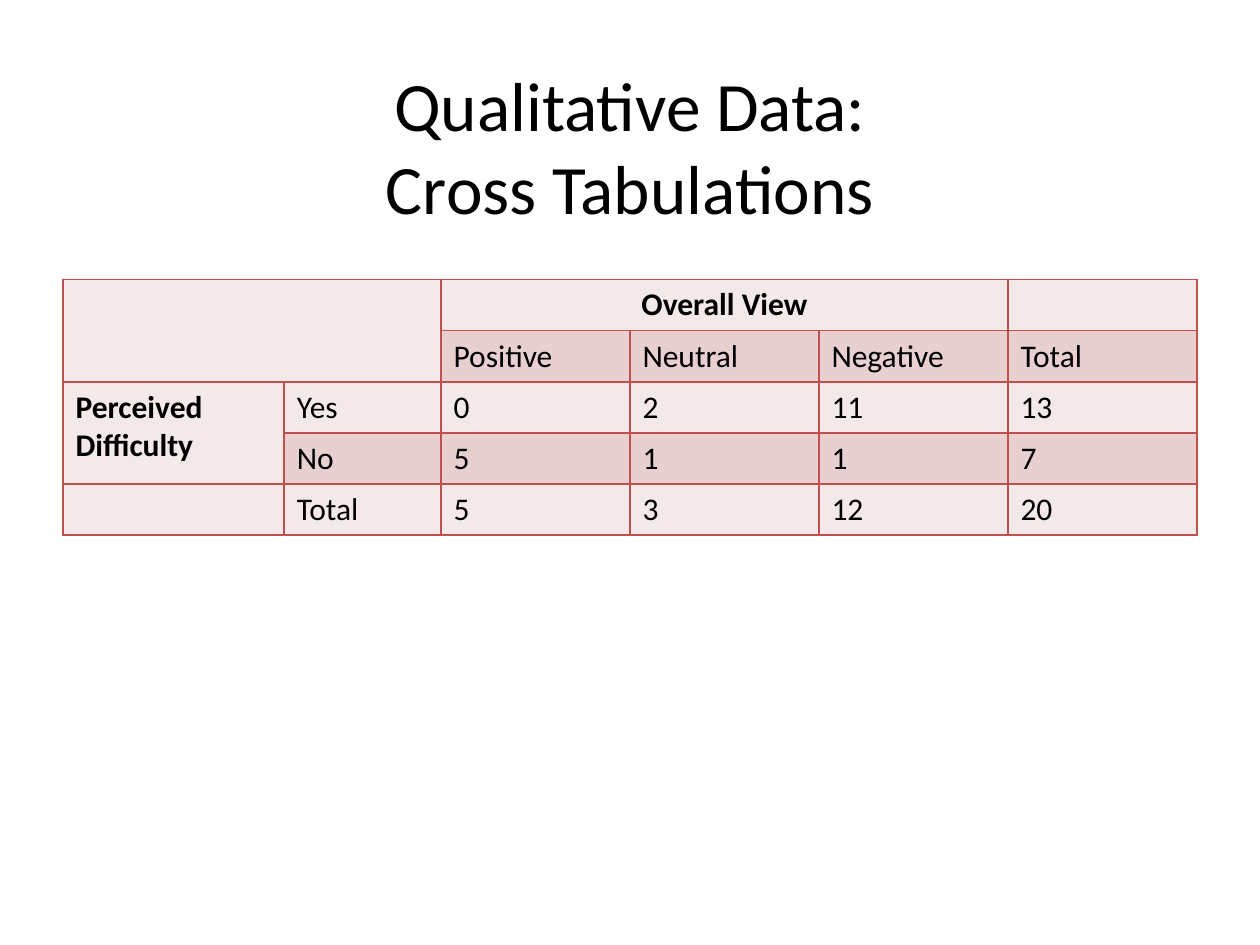
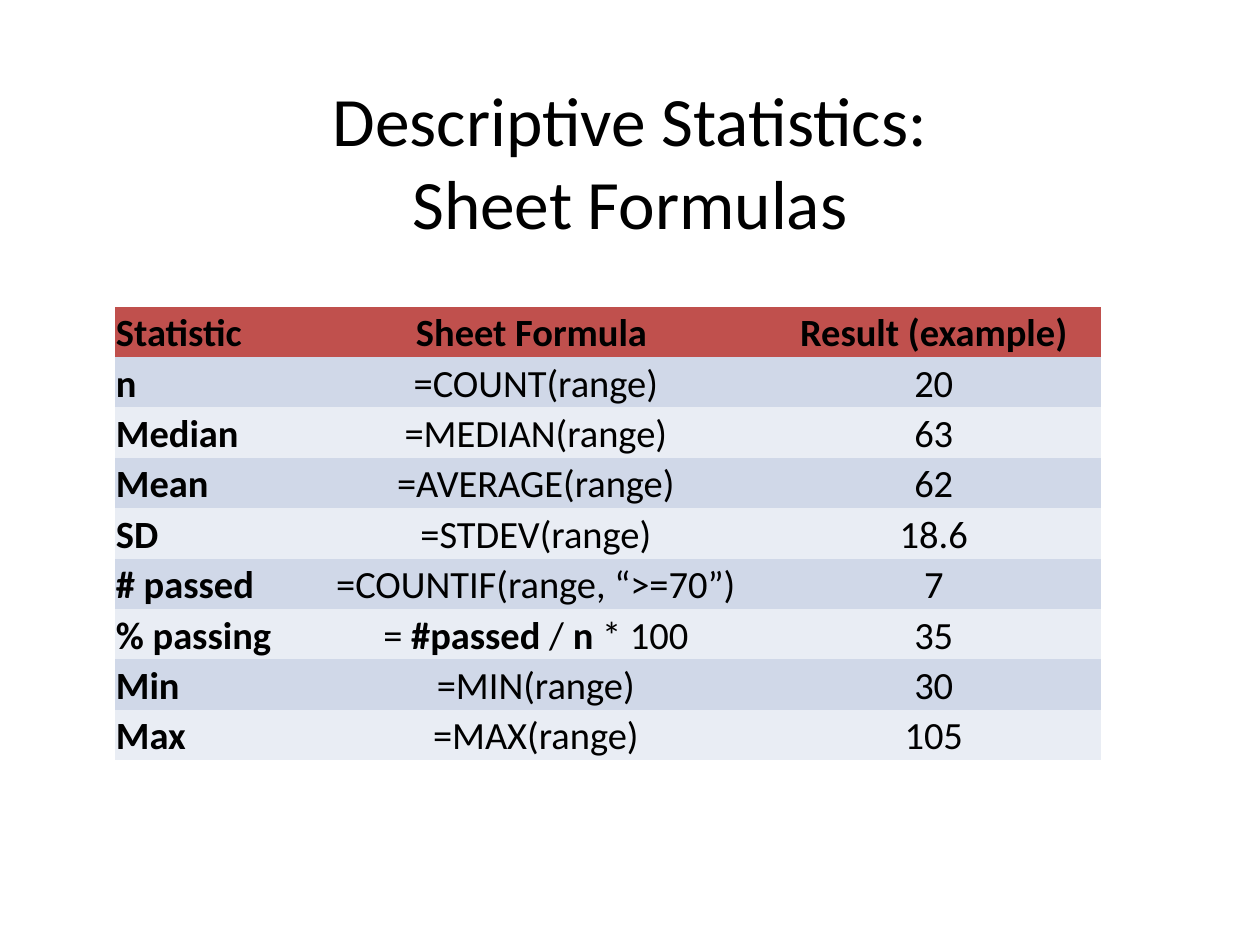
import pptx
import pptx.util
import pptx.dml.color
import pptx.enum.text
import pptx.oxml.ns
from lxml import etree

Pt = pptx.util.Pt
RGB = pptx.dml.color.RGBColor
ALIGN = pptx.enum.text.PP_ALIGN
ANCHOR = pptx.enum.text.MSO_ANCHOR
qn = pptx.oxml.ns.qn

FONT = "Calibri"
BLACK = RGB(0x00, 0x00, 0x00)
RED = RGB(0xC0, 0x50, 0x4D)
PALE_ROSE = RGB(0xF4, 0xE9, 0xE9)
ROSE = RGB(0xE8, 0xD0, 0xD0)
BLUE = RGB(0xD0, 0xD8, 0xE8)
PALE_BLUE = RGB(0xE9, 0xED, 0xF4)
NO_STYLE = "{2D5ABB26-0587-4C30-8999-92F81FD0307C}"

CROSS_TITLE = ("Qualitative Data:", "Cross Tabulations")
CROSS_ROWS = [
    ["", "", "Overall View", "", "", ""],
    ["", "", "Positive", "Neutral", "Negative", "Total"],
    ["Perceived Difficulty", "Yes", "0", "2", "11", "13"],
    ["", "No", "5", "1", "1", "7"],
    ["", "Total", "5", "3", "12", "20"],
]
CROSS_MERGES = [((0, 0), (1, 1)), ((0, 2), (0, 4)), ((2, 0), (3, 0))]
CROSS_HEADINGS = [(0, 2), (2, 0)]
CROSS_WIDTHS = [126.4, 89.6] + [108] * 4

FORMULA_TITLE = ("Descriptive Statistics:", "Sheet Formulas")
FORMULA_ROWS = [
    ["Statistic", "Sheet Formula ", "Result (example)"],
    ["n", "=COUNT(range)", "20"],
    ["Median", "=MEDIAN(range)", "63"],
    ["Mean", "=AVERAGE(range)", "62"],
    ["SD", "=STDEV(range)", "18.6"],
    ["# passed", "=COUNTIF(range, “>=70”)", "7"],
    ["% passing",
     [("= ", False), ("#passed ", True), ("/ ", False), ("n", True), (" * 100", False)],
     "35"],
    ["Min", "=MIN(range)", "30"],
    ["Max", "=MAX(range)", "105"],
]
FORMULA_WIDTHS = [108.6, 264, 190.8]


def add_run(paragraph, text, size, bold=False):
    run = paragraph.add_run()
    run.text = text
    run.font.name = FONT
    run.font.size = Pt(size)
    run.font.bold = bold
    run.font.color.rgb = BLACK


def add_title(slide, lines, top):
    frame = slide.shapes.add_textbox(Pt(36), Pt(top), Pt(648), Pt(90)).text_frame
    frame.word_wrap = True
    frame.vertical_anchor = ANCHOR.MIDDLE
    heading = frame.paragraphs[0]
    heading.alignment = ALIGN.CENTER
    add_run(heading, lines[0], 39.6)
    heading.add_line_break()
    add_run(heading, lines[1], 39.6)


def add_grid(slide, rows, widths, left, top, row_height):
    grid = slide.shapes.add_table(len(rows), len(widths), Pt(left), Pt(top),
                                  Pt(sum(widths)), Pt(row_height * len(rows))).table
    grid.first_row = grid.horz_banding = False
    next(grid._tbl.iter(qn("a:tableStyleId"))).text = NO_STYLE
    for column, width in zip(grid.columns, widths):
        column.width = Pt(width)
    for row in grid.rows:
        row.height = Pt(row_height)
    return grid


def fill_cell(cell, content, size, bold, alignment, colour):
    cell.fill.solid()
    cell.fill.fore_color.rgb = colour
    paragraph = cell.text_frame.paragraphs[0]
    paragraph.alignment = alignment
    paragraph.font.size = Pt(size)
    runs = [(content, bold)] if isinstance(content, str) else content
    for text, run_bold in runs:
        if text:
            add_run(paragraph, text, size, run_bold)


def outline_cell(cell):
    properties = cell._tc.get_or_add_tcPr()
    for side in ("a:lnL", "a:lnR", "a:lnT", "a:lnB"):
        line = etree.SubElement(properties, qn(side), w=str(Pt(1)))
        solid = etree.SubElement(line, qn("a:solidFill"))
        etree.SubElement(solid, qn("a:srgbClr"), val=str(RED))


def build_cross_tabulation(slide):
    add_title(slide, CROSS_TITLE, 38.2)
    grid = add_grid(slide, CROSS_ROWS, CROSS_WIDTHS, 36, 159.8, 29.2)
    for r, row in enumerate(CROSS_ROWS):
        for c, content in enumerate(row):
            cell = grid.cell(r, c)
            outline_cell(cell)
            fill_cell(cell, content, 18, (r, c) in CROSS_HEADINGS,
                      ALIGN.CENTER if r == 0 else ALIGN.LEFT,
                      ROSE if r % 2 else PALE_ROSE)
    for first, last in CROSS_MERGES:
        grid.cell(*first).merge(grid.cell(*last))


def build_formulas(slide):
    add_title(slide, FORMULA_TITLE, 46.8)
    grid = add_grid(slide, FORMULA_ROWS, FORMULA_WIDTHS, 65.6, 175.2, 28.8)
    for r, row in enumerate(FORMULA_ROWS):
        colour = RED if r == 0 else BLUE if r % 2 else PALE_BLUE
        for c, content in enumerate(row):
            cell = grid.cell(r, c)
            cell.margin_left = cell.margin_right = cell.margin_top = Pt(0.7)
            cell.margin_bottom = Pt(0)
            cell.vertical_anchor = ANCHOR.BOTTOM
            fill_cell(cell, content, 22, r == 0 or c == 0,
                      ALIGN.CENTER if c else ALIGN.LEFT, colour)


def main():
    deck = pptx.Presentation()
    deck.slide_width, deck.slide_height = Pt(720), Pt(540)
    for build in (build_cross_tabulation, build_formulas):
        build(deck.slides.add_slide(deck.slide_layouts[6]))
    deck.save("out.pptx")


if __name__ == "__main__":
    main()
